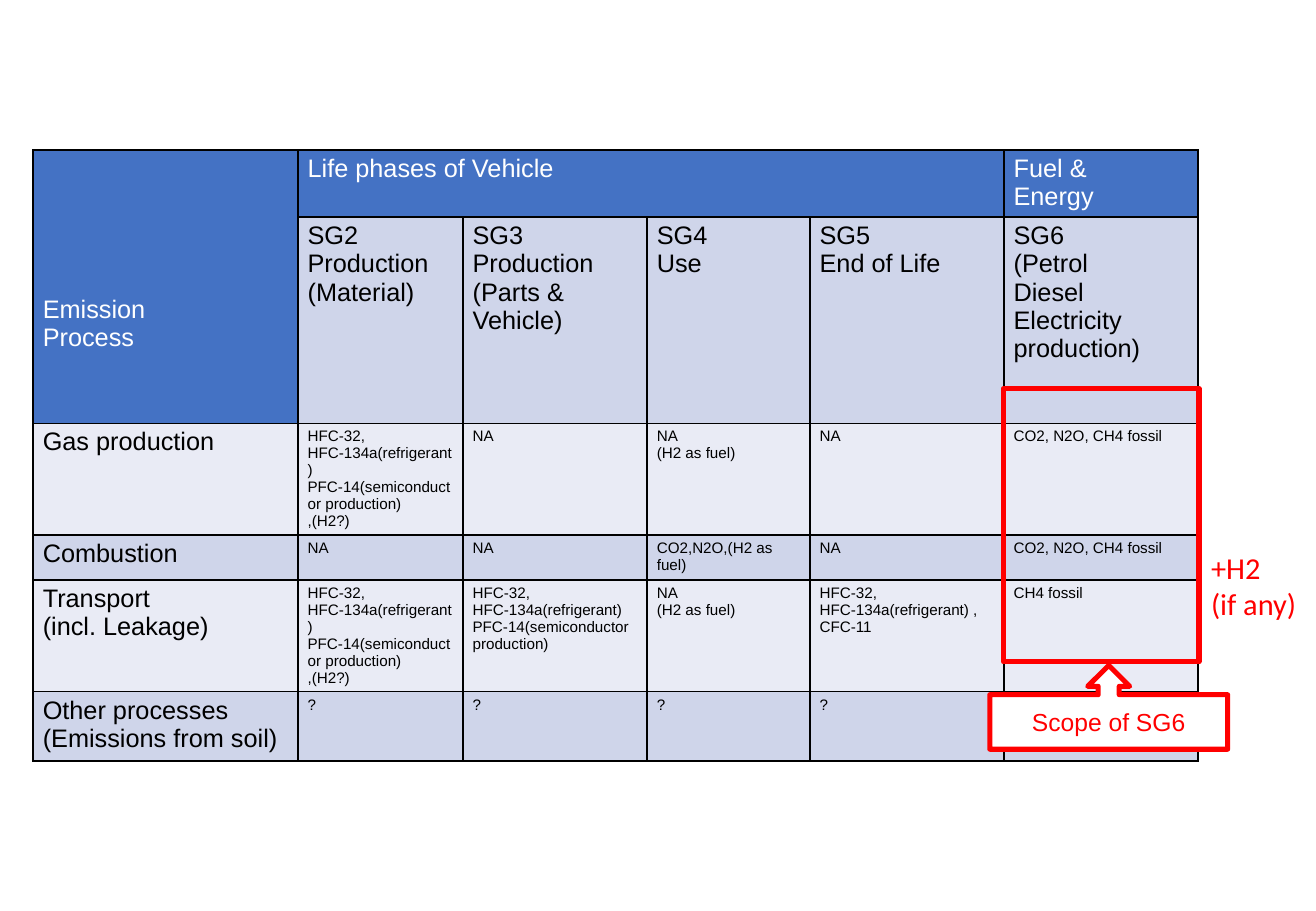
from lxml import etree
from pptx import Presentation
from pptx.dml.color import RGBColor
from pptx.enum import shapes, text
from pptx.oxml import ns
from pptx.util import Pt

RED, BLACK, WHITE = "FF0000", "000000", "FFFFFF"
HEADER, BAND, LIGHT = "4472C4", "CFD5EA", "E9EBF5"
COL_WIDTHS = [157, 97.8, 109.2, 96.5, 115, 115]
ROW_HEIGHTS = [39.7, 122, 66.2, 26.5, 66.2, 41]
REFRIGERANT = "HFC-32, HFC-134a(refrigerant)"
SEMICONDUCTOR = "PFC-14(semiconductor production)"
MATERIAL_GASES = f"{REFRIGERANT}\n{SEMICONDUCTOR}\n,(H2?)"
FOSSIL = "CO2, N2O, CH4 fossil"
ROWS = [
    ["Emission\nProcess", "Life phases of Vehicle", "", "", "", "Fuel &\nEnergy"],
    ["", "SG2\nProduction\n(Material)", "SG3\nProduction\n(Parts & Vehicle)", "SG4\nUse",
     "SG5\nEnd of Life", "SG6\n(Petrol\nDiesel\nElectricity production)"],
    ["Gas production", MATERIAL_GASES, "NA", "NA\n(H2 as fuel)", "NA", FOSSIL],
    ["Combustion", "NA", "NA", "CO2,N2O,(H2 as fuel)", "NA", FOSSIL],
    ["Transport\n(incl. Leakage)", MATERIAL_GASES, f"{REFRIGERANT}\n{SEMICONDUCTOR}",
     "NA\n(H2 as fuel)", f"{REFRIGERANT} ,\nCFC-11", "CH4 fossil"],
    ["Other processes\n(Emissions from soil)", "?", "?", "?", "?", "?"],
]


def rgb(value):
    """Return the colour for a hex string."""
    return RGBColor.from_string(value)


def write(tf, content, size=15, color=BLACK, font="Arial", align=None):
    """Write one paragraph for each line of the content."""
    for i, line in enumerate(content.split("\n")):
        p = tf.add_paragraph() if i else tf.paragraphs[0]
        p.alignment = align
        p.font.size = Pt(size)
        if line:
            r = p.add_run()
            r.text = line
            r.font.size, r.font.name, r.font.bold = Pt(size), font, False
            r.font.color.rgb = rgb(color)


def add_borders(cell):
    """Draw a thin black line on all four sides of a cell."""
    tc_pr = cell._tc.get_or_add_tcPr()
    for i, side in enumerate(("lnL", "lnR", "lnT", "lnB")):
        ln = etree.Element(ns.qn(f"a:{side}"), w=str(Pt(1)))
        fill = etree.SubElement(ln, ns.qn("a:solidFill"))
        etree.SubElement(fill, ns.qn("a:srgbClr"), val=BLACK)
        tc_pr.insert(i, ln)


def add_emission_table(s, left, top):
    """Place the table of emission processes against life phases."""
    table = s.shapes.add_table(len(ROWS), len(COL_WIDTHS), Pt(left), Pt(top),
                               Pt(sum(COL_WIDTHS)), Pt(sum(ROW_HEIGHTS))).table
    for column, width in zip(table.columns, COL_WIDTHS):
        column.width = Pt(width)
    for i, (row, height) in enumerate(zip(ROWS, ROW_HEIGHTS)):
        table.rows[i].height = Pt(height)
        for j, content in enumerate(row):
            cell = table.cell(i, j)
            header = i == 0 or (i == 1 and j == 0)
            cell.margin_left = cell.margin_right = Pt(5.76)
            cell.margin_top = cell.margin_bottom = Pt(2.88)
            cell.fill.solid()
            cell.fill.fore_color.rgb = rgb(HEADER if header else BAND if i % 2 else LIGHT)
            if i == 5:
                cell.fill.fore_color.rgb = rgb(BAND)
            add_borders(cell)
            write(cell.text_frame, content, size=15 if i < 2 or j == 0 else 9,
                  color=WHITE if header else BLACK)
    table.cell(0, 0).margin_top = Pt(86)
    table.cell(0, 0).merge(table.cell(1, 0))
    table.cell(0, 1).merge(table.cell(0, 4))


def add_red_shape(s, kind, left, top, width, height, fill=None):
    """Add a shape with a red outline and an optional fill."""
    sp = s.shapes.add_shape(kind, Pt(left), Pt(top), Pt(width), Pt(height))
    sp.shadow.inherit = False
    sp.line.color.rgb, sp.line.width = rgb(RED), Pt(3)
    if fill:
        sp.fill.solid()
        sp.fill.fore_color.rgb = rgb(fill)
    else:
        sp.fill.background()
    return sp


def add_scope(s, left, top, width, height):
    """Frame the scope of SG6 and add its callout below and note at the right."""
    add_red_shape(s, shapes.MSO_SHAPE.RECTANGLE, left, top, width, height)
    sp = add_red_shape(s, shapes.MSO_SHAPE.UP_ARROW_CALLOUT, left - 8, top + height + 2,
                       141, 49.7, WHITE)
    sp.text_frame.vertical_anchor = text.MSO_ANCHOR.MIDDLE
    write(sp.text_frame, "Scope of SG6", size=14.6, color=RED, align=text.PP_ALIGN.CENTER)
    note = s.shapes.add_textbox(Pt(left + width), Pt(top + 91.4), Pt(70), Pt(51))
    note.text_frame.word_wrap = True
    write(note.text_frame, "+H2\n(if any)", size=18, color=RED, font="Calibri")


def main():
    """Build and save the slide."""
    prs = Presentation()
    prs.slide_width, prs.slide_height = Pt(780), Pt(540)
    s = prs.slides.add_slide(prs.slide_layouts[6])
    add_emission_table(s, 19.6, 89)
    add_scope(s, 594.7, 230.4, 116, 162)
    prs.save("out.pptx")


if __name__ == "__main__":
    main()
